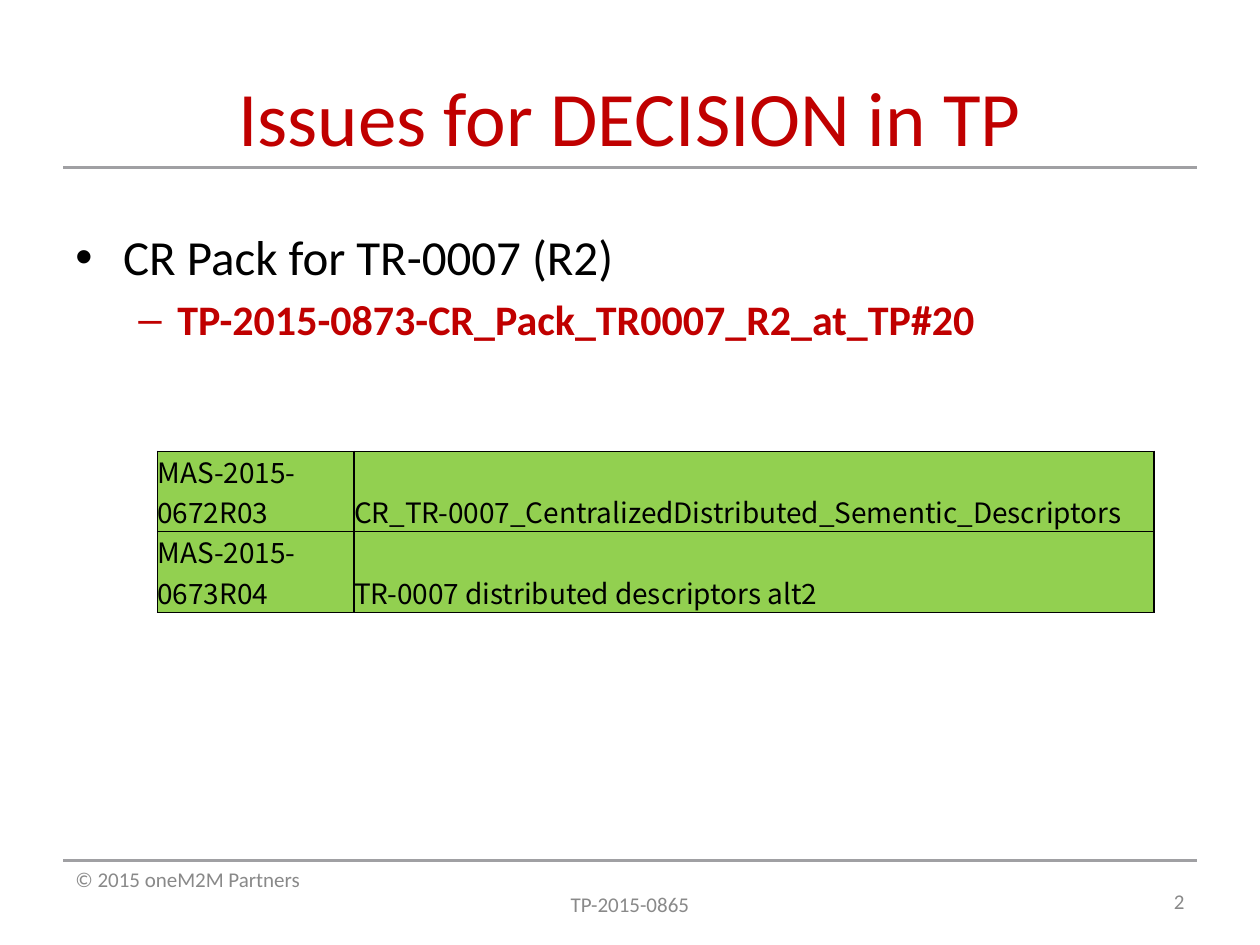
from lxml.etree import SubElement
from pptx import Presentation
from pptx.dml.color import RGBColor
from pptx.enum.shapes import MSO_CONNECTOR
from pptx.enum.text import MSO_ANCHOR, MSO_AUTO_SIZE, PP_ALIGN
from pptx.oxml.ns import qn
from pptx.util import Inches, Pt

COLORS = {"red": "C00000", "black": "000000", "rule": "A0A0A3",
          "footer": "898989", "green": "92D050"}
ROWS = [
    ("MAS-2015-0672R03", "CR_TR-0007_CentralizedDistributed_Sementic_Descriptors"),
    ("MAS-2015-0673R04", "TR-0007 distributed descriptors alt2"),
]
ROW_HEIGHT = 0.64  # two lines of 16 pt text


def color(name):
    return RGBColor.from_string(COLORS[name])


def style(p, size, fill, name="Calibri", bold=False, align=PP_ALIGN.LEFT):
    p.alignment = align
    for r in p.runs:
        r.font.size = Pt(size)
        r.font.name = name
        r.font.bold = bold
        r.font.color.rgb = color(fill)


def add_rule(s, y):
    line = s.shapes.add_connector(MSO_CONNECTOR.STRAIGHT, Inches(0.5), Inches(y),
                                  Inches(9.5), Inches(y))
    line.line.color.rgb = color("rule")
    line.line.width = Pt(1.75)
    SubElement(line._element.spPr, qn("a:effectLst"))


def add_text(s, x, y, w, h, lines, anchor=MSO_ANCHOR.TOP):
    tf = s.shapes.add_textbox(Inches(x), Inches(y), Inches(w), Inches(h)).text_frame
    tf.word_wrap = True
    tf.vertical_anchor = anchor
    tf.text = "\n".join(lines)
    return tf.paragraphs


def set_bullet(p, char, left, hanging):
    pPr = p._p.get_or_add_pPr()
    pPr.set("marL", str(Inches(left)))
    pPr.set("indent", str(-Inches(hanging)))
    SubElement(pPr, qn("a:buFont"), typeface="Arial")
    SubElement(pPr, qn("a:buChar"), char=char)


def set_borders(cell, widths):
    tcPr = cell._tc.get_or_add_tcPr()
    for side, width in widths.items():
        ln = SubElement(tcPr, qn(f"a:ln{side}"), w=str(Pt(width)))
        fill = SubElement(ln, qn("a:solidFill"))
        SubElement(fill, qn("a:srgbClr"), val=COLORS["black"])


def add_title(s, text):
    title = s.shapes.title
    title.left, title.top = Inches(0.5), Inches(0.5)
    title.width, title.height = Inches(9), Inches(1.25)
    tf = title.text_frame
    tf.text = text
    tf.auto_size = MSO_AUTO_SIZE.NONE
    tf.vertical_anchor = MSO_ANCHOR.TOP
    style(tf.paragraphs[0], 44, "red", align=PP_ALIGN.CENTER)


def add_bullets(s):
    topic, document = add_text(s, 0.5, 1.75, 9, 4.95, [
        "CR Pack for TR-0007 (R2)", "TP-2015-0873-CR_Pack_TR0007_R2_at_TP#20"])
    document.level = 1
    document.space_before = Pt(4.8)
    set_bullet(topic, "•", 0.38, 0.38)
    set_bullet(document, "–", 0.81, 0.31)
    style(topic, 28, "black")
    style(document, 24, "red", bold=True)


def add_contributions(s):
    table = s.shapes.add_table(len(ROWS), 2, Inches(1.25), Inches(3.58),
                               Inches(7.92), Inches(ROW_HEIGHT * len(ROWS))).table
    table.first_row = table.horz_banding = False
    for column, width in zip(table.columns, (1.56, 6.35)):
        column.width = Inches(width)
    for i, row in enumerate(ROWS):
        table.rows[i].height = Inches(ROW_HEIGHT)
        for j, text in enumerate(row):
            cell = table.cell(i, j)
            cell.text = text
            cell.vertical_anchor = MSO_ANCHOR.BOTTOM
            cell.margin_left = cell.margin_right = 0
            cell.margin_top = cell.margin_bottom = 0
            style(cell.text_frame.paragraphs[0], 16, "black", "Noto Sans CJK SC")
            # Borders come before the fill in the cell properties
            last_id = i == len(ROWS) - 1 and j == 0
            set_borders(cell, {"L": 1, "R": 1, "T": 0.5, "B": 1 if last_id else 0.5})
            cell.fill.solid()
            cell.fill.fore_color.rgb = color("green")


def add_footer(s):
    rights, number = add_text(s, 0.5, 6.83, 9, 0.51,
                              ["© 2015 oneM2M Partners", "TP-2015-0865"])
    style(rights, 12, "footer")
    style(number, 12, "footer", align=PP_ALIGN.CENTER)
    page = add_text(s, 7.17, 6.95, 2.33, 0.4, ["2"], MSO_ANCHOR.MIDDLE)[0]
    style(page, 12, "footer", align=PP_ALIGN.RIGHT)


def main():
    prs = Presentation()
    prs.slide_width, prs.slide_height = Inches(10), Inches(7.5)
    s = prs.slides.add_slide(prs.slide_layouts[5])
    # Rules under the title and above the footer
    for y in (6.83, 1.33):
        add_rule(s, y)
    add_footer(s)
    add_title(s, "Issues for DECISION in TP")
    add_bullets(s)
    add_contributions(s)
    prs.save("out.pptx")


if __name__ == "__main__":
    main()
